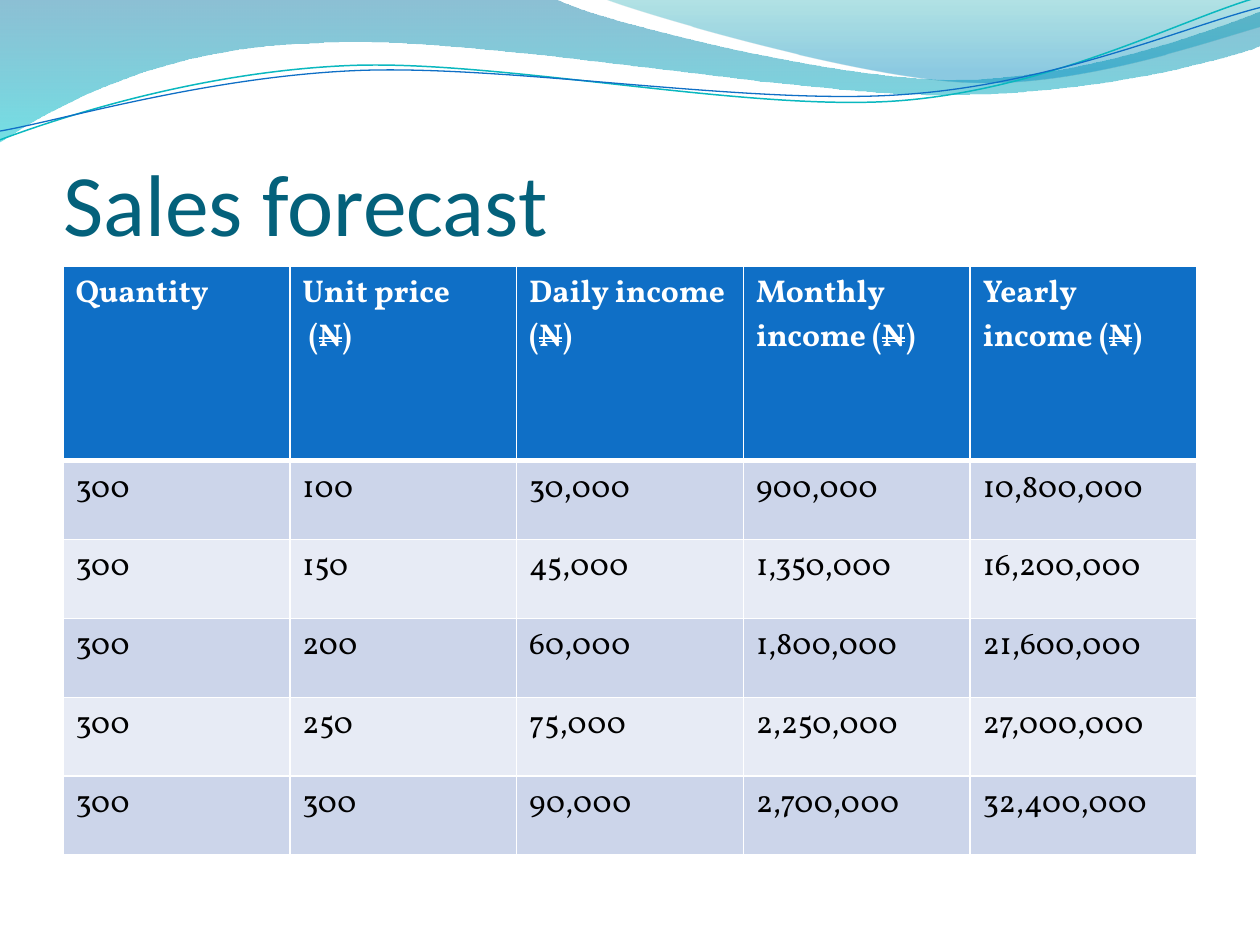
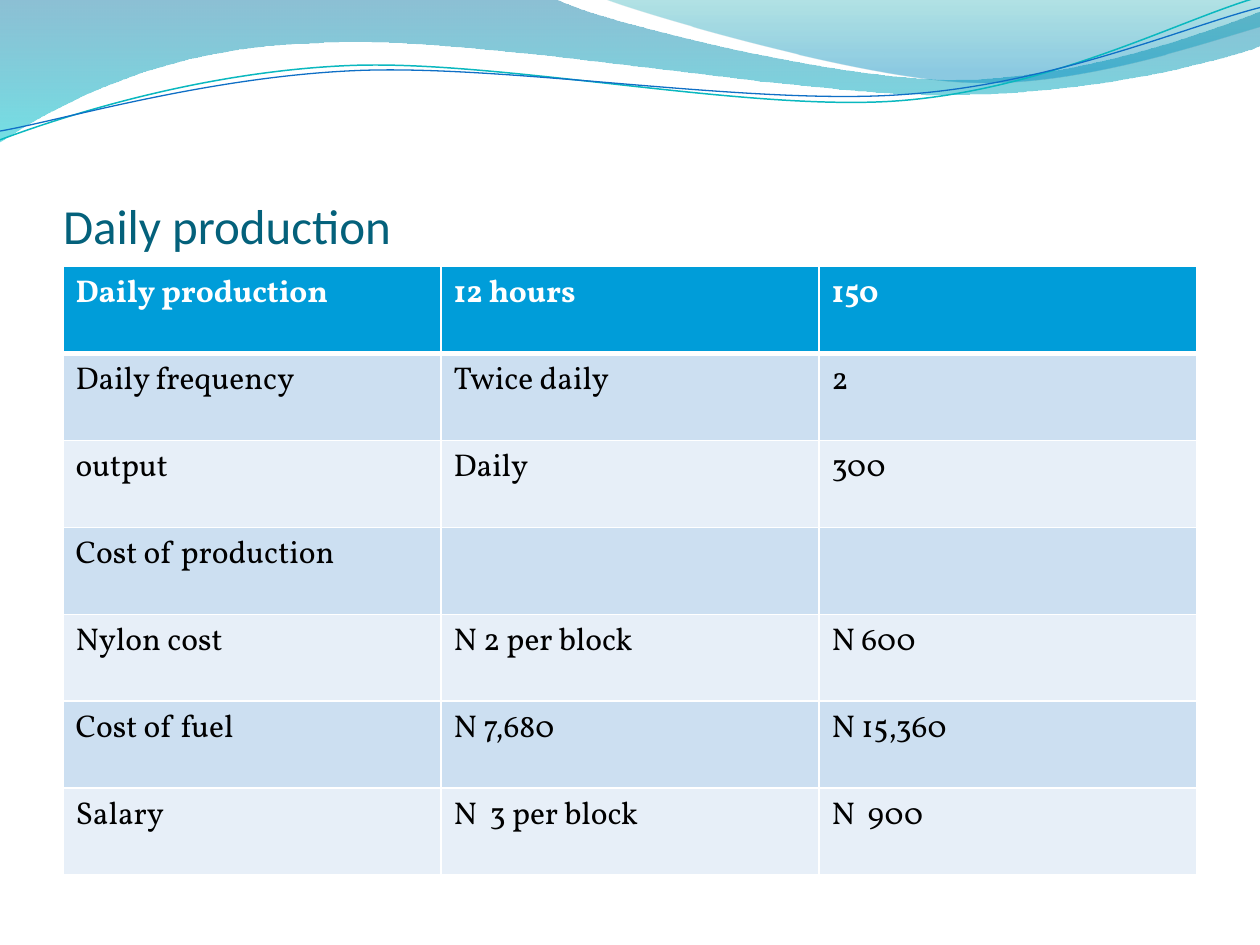
from math import cos, radians, sin
from lxml.etree import SubElement
from pptx import Presentation
from pptx.dml.color import RGBColor
from pptx.enum.text import MSO_ANCHOR, MSO_AUTO_SIZE, PP_ALIGN
from pptx.oxml.ns import qn
from pptx.util import Inches, Pt

WHITE = RGBColor(0xFF, 0xFF, 0xFF)
BLACK = RGBColor(0, 0, 0)
TITLE = RGBColor(0x04, 0x61, 0x7B)
BLUE = RGBColor(0x0F, 0x6F, 0xC6)
SKY = RGBColor(0x00, 0x9D, 0xD9)
AQUA = RGBColor(0x0A, 0xB8, 0xBF)
DEEP = RGBColor(0x00, 0x74, 0xA1)
CYAN = RGBColor(0x00, 0xC6, 0xCF)
TEAL = RGBColor(0x00, 0xA1, 0xA9)
OCEAN = RGBColor(0x00, 0x8B, 0xBF)
MIST, HAZE = RGBColor(0xCC, 0xD5, 0xEA), RGBColor(0xE7, 0xEB, 0xF5)
ICE, FROST = RGBColor(0xCC, 0xDF, 0xF1), RGBColor(0xE7, 0xEF, 0xF8)

deck = Presentation()
deck.slide_width, deck.slide_height = Inches(10), Inches(7.5)
WIDTH = deck.slide_width
MARGIN = int(WIDTH * 0.05)
SPAN = WIDTH - 2 * MARGIN
TOP = Pt(152.4)
TILT = 2.7

# Waves in inches: a start point, then line ends (one point) or curves (three points)
BANDS = [
    ([(0, 0), [(4.4, -0.01)],
      [(4.76, 0.17), (6.64, 0.63), (7.58, 0.63)],
      [(8.53, 0.63), (9.58, 0.26), (10, 0.09)],
      [(10.01, 0.36)],
      [(9.83, 0.44), (8.7, 0.76), (7.46, 0.75)],
      [(6.22, 0.75), (3.82, 0.28), (2.57, 0.34)],
      [(1.29, 0.36), (0.46, 0.83), (-0.01, 1.13)],
      [(0, 0)]],
     [(0, DEEP, 45), (1, CYAN, 55)]),
    ([(4.79, -0.01),
      [(5.09, 0.11), (6.82, 0.62), (7.69, 0.65)],
      [(8.56, 0.69), (9.61, 0.32), (10, 0.21)],
      [(10, 0)], [(4.79, -0.01)]],
     [(0, TEAL, 30), (0.8, OCEAN, 45)]),
]
LINES = [
    ([(0, 1.11),
      [(0.48, 0.93), (1.58, 0.57), (2.77, 0.52)],
      [(3.95, 0.47), (5.93, 0.89), (7.13, 0.8)],
      [(8.33, 0.71), (9.38, 0.15), (9.98, -0.02)]], AQUA, 0.85),
    ([(0, 1.04),
      [(0.47, 0.96), (1.64, 0.61), (2.83, 0.56)],
      [(4.03, 0.51), (5.97, 0.84), (7.17, 0.75)],
      [(8.36, 0.67), (9.41, 0.21), (10, 0.06)]], BLUE, 0.75),
]

# Each sheet: title, size, head height, table height, head fill, band fills, rows
# A "~" before a letter strikes it through; a line break starts a paragraph
SHEETS = [
    ("Sales forecast", 50, 1.54, 4.67, BLUE, (MIST, HAZE), [
        ("Quantity", "Unit price\n (~N)", "Daily income (~N)",
         "Monthly income (~N)", "Yearly income (~N)"),
        ("300", "100", "30,000", "900,000", "10,800,000"),
        ("300", "150", "45,000", "1,350,000", "16,200,000"),
        ("300", "200", "60,000", "1,800,000", "21,600,000"),
        ("300", "250", "75,000", "2,250,000", "27,000,000"),
        ("300", "300", "90,000", "2,700,000", "32,400,000")]),
    ("Daily production", 28, 0.69, 4.83, SKY, (ICE, FROST), [
        ("Daily production", "12 hours", "150"),
        ("Daily frequency", "Twice daily", "2"),
        ("output", "Daily", "300"),
        ("Cost of production", "", ""),
        ("Nylon cost", "N 2 per block", "N 600"),
        ("Cost of fuel", "N 7,680", "N 15,360"),
        ("Salary", "N  3 per block", "N  900")]),
]


def trace(slide, route, tilt=0):
    """Draw a route as a freeform; a tilted one is an open line turned back by tilt."""
    turn, mid, rise = radians(tilt), 4.99, 0.58
    dots = []
    for x, y in [route[0]] + [dot for leg in route[1:] for dot in leg]:
        x, y = x - mid, y - rise
        dots.append((Inches(mid + x * cos(turn) - y * sin(turn)),
                     Inches(rise + x * sin(turn) + y * cos(turn))))
    pen = slide.shapes.build_freeform(*dots[0])
    pen.add_line_segments(dots[1:], close=not tilt)
    wave = pen.convert_to_shape()
    wave.shadow.inherit = False
    wave.rotation = -tilt % 360

    # Join each three line ends of a curve into one Bezier segment
    ends = iter(list(wave.element.iter(qn("a:lnTo"))))
    for leg in route[1:]:
        parts = [next(ends) for _ in leg]
        if len(leg) == 3:
            curve = SubElement(parts[0].getparent(), qn("a:cubicBezTo"))
            parts[0].addprevious(curve)
            for part in parts:
                curve.append(part[0])
                part.getparent().remove(part)
    return wave


def write(para, text, font, size, color, bold=False):
    """Add text run by run, striking each letter marked with "~"."""
    for n, part in enumerate(text.split("~")):
        pieces = [(part, False)] if n == 0 else [(part[0], True), (part[1:], False)]
        for piece, struck in pieces:
            run = para.add_run()
            run.text = piece
            run.font.name, run.font.size = font, Pt(size)
            run.font.color.rgb, run.font.bold = color, bold
            if struck:
                run._r.get_or_add_rPr().set("strike", "dblStrike")


# Title-only layout, cleared of its footer placeholders
layout = deck.slide_layouts[5]
for holder in list(layout.placeholders)[1:]:
    layout.shapes.element.remove(holder.element)
slides = [deck.slides.add_slide(layout) for _ in SHEETS]

# Waves: drawn once, then moved to the layout behind everything
waves = []
for route, stops in BANDS:
    wave = trace(slides[0], route)
    wave.fill.gradient()
    wave.fill.gradient_angle = 270
    for stop, (place, color, _) in zip(wave.fill.gradient_stops, stops):
        stop.position, stop.color.rgb = place, color
    for node, (_, _, alpha) in zip(wave.element.iter(qn("a:srgbClr")), stops):
        SubElement(node, qn("a:alpha")).set("val", str(alpha * 1000))
    wave.line.fill.background()
    waves.append(wave)
for route, color, weight in LINES:
    wave = trace(slides[0], route, TILT)
    wave.fill.background()
    wave.line.color.rgb, wave.line.width = color, Pt(weight)
    waves.append(wave)
for n, wave in enumerate(waves):
    layout.shapes.element.insert(2 + n, wave.element)

for slide, (name, size, head, tall, lead, bands, rows) in zip(slides, SHEETS):
    # Title
    title = slide.shapes.title
    title.left, title.top = MARGIN, Inches(0.77)
    title.width, title.height = SPAN, Inches(1.25)
    frame = title.text_frame
    frame.auto_size, frame.word_wrap = MSO_AUTO_SIZE.NONE, True
    frame.vertical_anchor = MSO_ANCHOR.BOTTOM
    frame.margin_left = frame.margin_right = frame.margin_bottom = 0
    frame.margin_top = Inches(0.05)
    frame.paragraphs[0].alignment = PP_ALIGN.LEFT
    write(frame.paragraphs[0], name, "Calibri", size, TITLE)

    # Table: a head, then equal rows
    table = slide.shapes.add_table(
        len(rows), len(rows[0]), MARGIN, TOP, SPAN, Inches(tall)).table
    for col in table.columns:
        col.width = SPAN // len(rows[0])
    for r, row in enumerate(rows):
        table.rows[r].height = Inches((tall - head) / (len(rows) - 1) if r else head)
        for c, text in enumerate(row):
            cell = table.cell(r, c)
            body = cell.text_frame
            for n, line in enumerate(text.split("\n") if text else []):
                para = body.add_paragraph() if n else body.paragraphs[0]
                write(para, line, "Vollkorn", 18, BLACK if r else WHITE, r == 0)

            # Borders go before the fill: thick below the head, thin elsewhere
            props = cell._tc.get_or_add_tcPr()
            for side in ("L", "R", "T", "B"):
                thick = (r, side) in ((0, "B"), (1, "T"))
                edge = SubElement(props, qn("a:ln" + side), w=str(Pt(3 if thick else 1)))
                paint = SubElement(edge, qn("a:solidFill"))
                SubElement(paint, qn("a:srgbClr"), val=str(WHITE))
            cell.fill.solid()
            cell.fill.fore_color.rgb = bands[(r - 1) % 2] if r else lead

deck.save("out.pptx")
